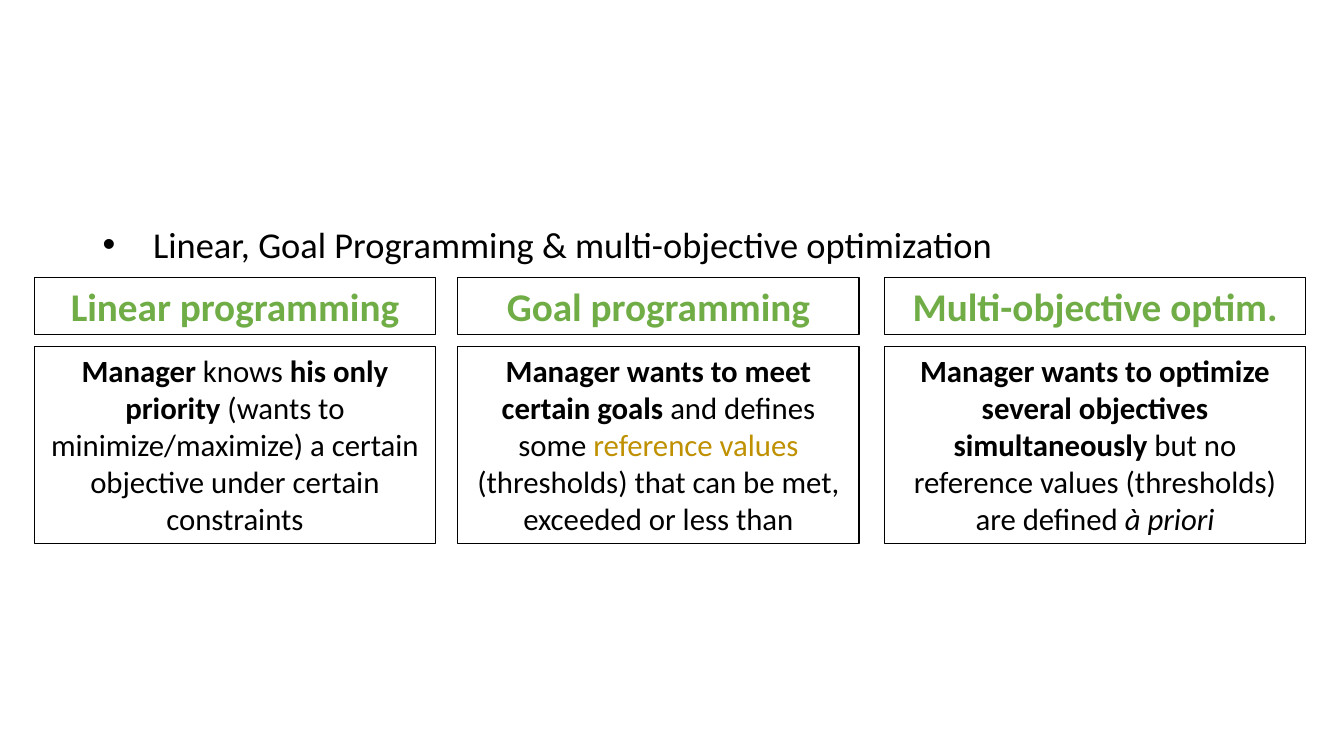
from dataclasses import dataclass

from lxml import etree
from pptx import Presentation
from pptx import util as u
from pptx.dml.color import RGBColor
from pptx.enum import text
from pptx.oxml.ns import qn
from pptx.shapes.autoshape import Shape
from pptx.slide import Slide

PX = 9144
BLACK, GREEN, GOLD = "000000", "70AD47", "BF9000"


@dataclass(frozen=True)
class Run:
    """A stretch of text in one style."""
    words: str
    bold: bool = False
    slant: bool = False
    color: str = BLACK


@dataclass(frozen=True)
class Column:
    """A method with its head and the runs that explain it."""
    left: int
    width: int
    head: str
    body: tuple[Run, ...]


COLUMNS = (
    Column(34, 398, "Linear programming", (
        Run("Manager ", bold=True),
        Run("knows"),
        Run(" his only priority ", bold=True),
        Run("(wants to minimize/maximize) a certain objective under certain constraints"),
    )),
    Column(454, 398, "Goal programming", (
        Run("Manager wants to meet certain goals ", bold=True),
        Run("and defines some "),
        Run("reference values ", color=GOLD),
        Run("(thresholds) that can be met, exceeded or less than"),
    )),
    Column(877, 418, "Multi-objective optim.", (
        Run("Manager wants to optimize several objectives simultaneously ", bold=True),
        Run("but no reference values (thresholds) are defined "),
        Run("à priori", slant=True),
    )),
)


def px(count: int) -> u.Emu:
    """Turn px into EMU."""
    return u.Emu(count * PX)


def paint(code: str) -> RGBColor:
    """Turn a hex string into a colour."""
    return RGBColor.from_string(code)


def write(slide: Slide, left: int, top: int, width: int, height: int,
          size: int, runs: tuple[Run, ...]) -> Shape:
    """Add a text box that holds one paragraph of runs."""
    box = slide.shapes.add_textbox(px(left), px(top), px(width), px(height))
    frame = box.text_frame
    frame.word_wrap = True
    frame.auto_size = text.MSO_AUTO_SIZE.SHAPE_TO_FIT_TEXT
    for item in runs:
        run = frame.paragraphs[0].add_run()
        run.text = item.words
        font = run.font
        font.name, font.size = "Calibri", u.Pt(size)
        font.bold, font.italic = item.bold, item.slant
        font.color.rgb = paint(item.color)
    return box


def outline(box: Shape) -> None:
    """Frame a box in black and centre its text."""
    box.line.color.rgb = paint(BLACK)
    box.line.width = u.Pt(0.75)
    box.text_frame.paragraphs[0].alignment = text.PP_ALIGN.CENTER


def bullet(box: Shape, indent: int) -> None:
    """Give the paragraph a hanging bullet."""
    props = box.text_frame.paragraphs[0]._p.get_or_add_pPr()
    props.set("marL", str(px(indent)))
    props.set("indent", str(px(-indent)))
    etree.SubElement(props, qn("a:buFont"), typeface="Arial")
    etree.SubElement(props, qn("a:buChar"), char="•")


def main() -> None:
    """Build and save the slide."""
    deck = Presentation()
    deck.slide_width, deck.slide_height = px(1333), px(750)
    slide = deck.slides.add_slide(deck.slide_layouts[6])
    topic = Run("Linear, Goal Programming & multi-objective optimization")
    bullet(write(slide, 92, 215, 969, 54, 26, (topic,)), 50)
    for col in COLUMNS:
        head = Run(col.head, bold=True, color=GREEN)
        outline(write(slide, col.left, 275, col.width, 57, 28, (head,)))
        outline(write(slide, col.left, 344, col.width, 195, 22, col.body))
    deck.save("out.pptx")


if __name__ == "__main__":
    main()
